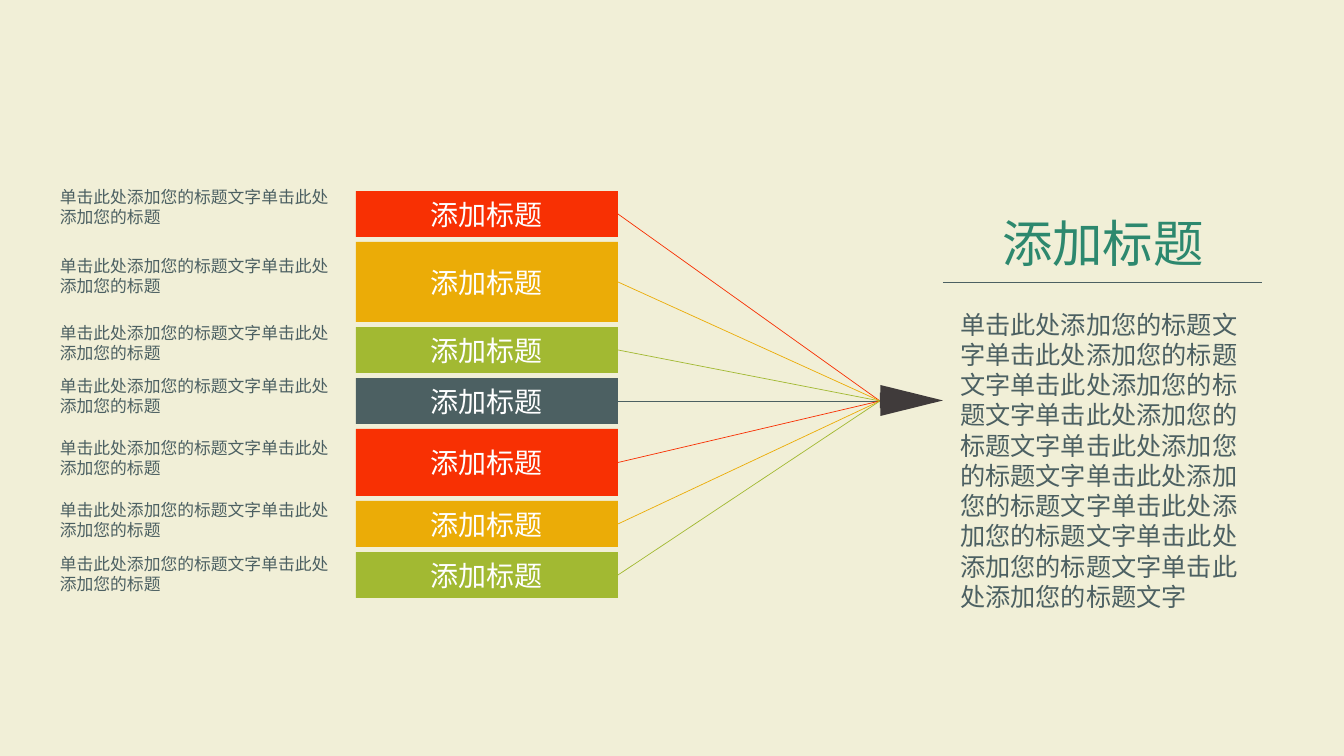
"""Build a slide where seven topics converge on one conclusion."""
import pptx
import pptx.dml.color
import pptx.enum.shapes
import pptx.enum.text
import pptx.oxml
import pptx.oxml.ns
import pptx.util

RGBColor = pptx.dml.color.RGBColor
ALIGN = pptx.enum.text.PP_ALIGN
ANCHOR = pptx.enum.text.MSO_ANCHOR
SHAPES = pptx.enum.shapes.MSO_SHAPE

CREAM = RGBColor(0xF1, 0xEF, 0xD7)
RED = RGBColor(0xF8, 0x30, 0x03)
AMBER = RGBColor(0xEB, 0xAC, 0x07)
GREEN = RGBColor(0xA2, 0xB9, 0x32)
SLATE = RGBColor(0x4C, 0x60, 0x62)
CHARCOAL = RGBColor(0x40, 0x3B, 0x3B)
TEAL = RGBColor(0x2D, 0x88, 0x6E)
WHITE = RGBColor(0xFF, 0xFF, 0xFF)
FONT = "Noto Sans CJK SC"

HEADING = "添加标题"
NOTE = "单击此处添加您的标题文字单击此处添加您的标题"
CONCLUSION = "单击此处添加您的标题文字" * 9
# (bar height, note top, colour)
TOPICS = [
    (46, 182, RED),
    (80, 251, AMBER),
    (46, 318, GREEN),
    (46, 371, SLATE),
    (67, 433, RED),
    (46, 495, AMBER),
    (46, 549, GREEN),
]
BAR_LEFT, BAR_TOP, BAR_WIDTH, BAR_GAP = 356, 191, 262, 5
NOTE_LEFT, NOTE_WIDTH, NOTE_HEIGHT = 50, 305, 50
ARROW_BOX = (880, 385, 63, 31)
FOCUS = (880, 401)
TITLE_BOX = (978, 207, 250, 72)
BODY_BOX = (950, 304, 305, 316)
RULE_START, RULE_END = (943, 282), (1262, 282)


def px(*lengths):
    return [round(length * 914400 / 100.8) for length in lengths]


def place(shape, box):
    shape.left, shape.top, shape.width, shape.height = px(*box)


def write(shape, text, size, color, align=ALIGN.LEFT, anchor=ANCHOR.TOP):
    frame = shape.text_frame
    frame.word_wrap = True
    frame.auto_size = pptx.enum.text.MSO_AUTO_SIZE.NONE
    frame.vertical_anchor = anchor
    paragraph = frame.paragraphs[0]
    paragraph.alignment = align
    paragraph.space_before = pptx.util.Pt(0)
    run = paragraph.add_run()
    run.text = text
    run.font.size = pptx.util.Pt(size)
    run.font.color.rgb = color
    run.font.name = FONT
    properties = run.font._element
    east_asian = pptx.oxml.ns.qn("a:ea")
    properties.find(pptx.oxml.ns.qn("a:latin")).addnext(
        properties.makeelement(east_asian, {"typeface": FONT}))
    return paragraph


def add_block(slide, kind, box, color):
    shape = slide.shapes.add_shape(kind, *px(*box))
    shape.shadow.inherit = False
    shape.fill.solid()
    shape.fill.fore_color.rgb = color
    shape.line.fill.background()
    return shape


def add_line(slide, start, end, color):
    line = slide.shapes.add_connector(
        pptx.enum.shapes.MSO_CONNECTOR.STRAIGHT, *px(*start, *end))
    line.line.color.rgb = color
    line.line.width = pptx.util.Pt(0.5)
    pptx.oxml.ns.qn("a:effectLst")
    properties = line._element.spPr
    properties.append(properties.makeelement(pptx.oxml.ns.qn("a:effectLst"), {}))
    return line


def add_topics(slide):
    top = BAR_TOP
    for height, note_top, color in TOPICS:
        bar = add_block(slide, SHAPES.RECTANGLE, (BAR_LEFT, top, BAR_WIDTH, height), color)
        write(bar, HEADING, size=20, color=WHITE, align=ALIGN.CENTER, anchor=ANCHOR.MIDDLE)
        start = (BAR_LEFT + BAR_WIDTH, top + height / 2)
        add_line(slide, start, FOCUS, color).begin_connect(bar, 3)
        note = slide.shapes.add_textbox(*px(NOTE_LEFT, note_top, NOTE_WIDTH, NOTE_HEIGHT))
        write(note, NOTE, size=12, color=SLATE)
        top += height + BAR_GAP


def add_conclusion(slide):
    arrow = add_block(slide, SHAPES.RIGHT_ARROW, ARROW_BOX, CHARCOAL)
    arrow.adjustments[0] = 0.5
    arrow.adjustments[1] = 2.02
    add_line(slide, RULE_START, RULE_END, SLATE)
    title, body = slide.shapes.title, slide.placeholders[1]
    place(title, TITLE_BOX)
    write(title, HEADING, size=36, color=TEAL, align=ALIGN.CENTER)
    place(body, BODY_BOX)
    properties = write(body, CONCLUSION, size=18, color=SLATE)._p.get_or_add_pPr()
    properties.set("marL", "0")
    properties.set("indent", "0")
    properties.append(properties.makeelement(pptx.oxml.ns.qn("a:buNone"), {}))


def main():
    presentation = pptx.Presentation()
    presentation.slide_width, presentation.slide_height = px(1344, 756)
    slide = presentation.slides.add_slide(presentation.slide_layouts[1])
    slide.background.fill.solid()
    slide.background.fill.fore_color.rgb = CREAM
    add_topics(slide)
    add_conclusion(slide)
    presentation.save("out.pptx")


if __name__ == "__main__":
    main()
